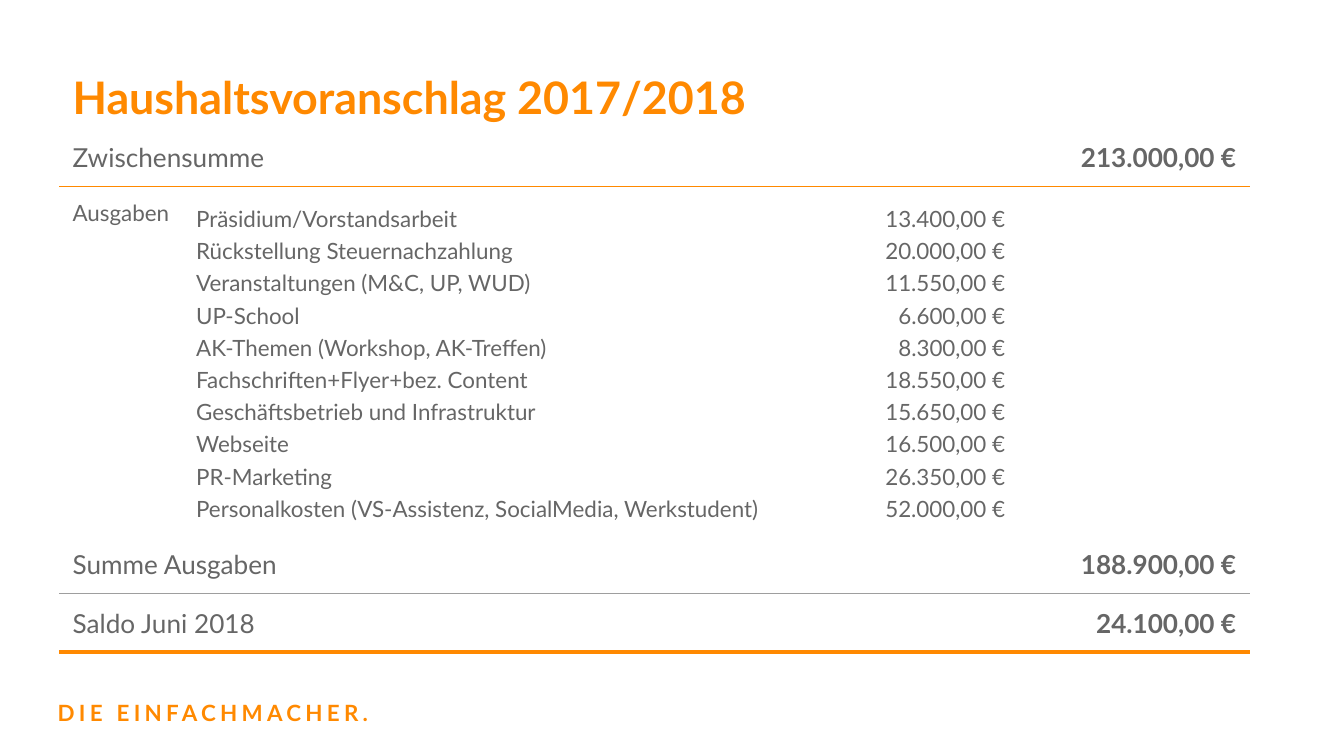
from lxml.etree import SubElement
from pptx import Presentation
from pptx.dml.color import RGBColor
from pptx.enum.text import MSO_ANCHOR, PP_ALIGN
from pptx.oxml.ns import qn
from pptx.util import Pt

FONT = "Lato"
ORANGE, TEXT_GRAY, RULE_GRAY = "FF8900", "666666", "9E9E9E"
INSET = 7.2

EXPENSES = [
    ("Präsidium/Vorstandsarbeit", "13.400,00 €"),
    ("Rückstellung Steuernachzahlung", "20.000,00 €"),
    ("Veranstaltungen (M&C, UP, WUD)", "11.550,00 €"),
    ("UP-School", "6.600,00 €"),
    ("AK-Themen (Workshop, AK-Treffen)", "8.300,00 €"),
    ("Fachschriften+Flyer+bez. Content", "18.550,00 €"),
    ("Geschäftsbetrieb und Infrastruktur", "15.650,00 €"),
    ("Webseite", "16.500,00 €"),
    ("PR-Marketing", "26.350,00 €"),
    ("Personalkosten (VS-Assistenz, SocialMedia, Werkstudent)", "52.000,00 €"),
]
# Table row: label and amount
TOTALS = {
    0: ("Zwischensumme", "213.000,00 €"),
    2: ("Summe Ausgaben", "188.900,00 €"),
    3: ("Saldo Juni 2018", "24.100,00 €"),
}
# Rule under a table row: colour and width
RULES = {0: (ORANGE, 0.75), 2: (RULE_GRAY, 0.75), 3: (ORANGE, 2.25)}


def color(value):
    return RGBColor.from_string(value)


def write(frame, lines, size, ink, bold=False, align=PP_ALIGN.LEFT, spacing=1.0):
    frame.word_wrap = True
    for index, line in enumerate(lines):
        paragraph = frame.paragraphs[0] if index == 0 else frame.add_paragraph()
        paragraph.alignment = align
        paragraph.line_spacing = spacing
        run = paragraph.add_run()
        run.text = line
        run.font.name = FONT
        run.font.size = Pt(size)
        run.font.bold = bold
        run.font.color.rgb = color(ink)


def set_insets(target):
    target.margin_left = target.margin_right = Pt(INSET)
    target.margin_top = target.margin_bottom = Pt(INSET)


def add_title(slide, left, top, width, height):
    title = slide.shapes.title
    title.left, title.top = Pt(left), Pt(top)
    title.width, title.height = Pt(width), Pt(height)
    set_insets(title.text_frame)
    title.text_frame.vertical_anchor = MSO_ANCHOR.TOP
    write(title.text_frame, ["Haushaltsvoranschlag 2017/2018"], 24, ORANGE,
          bold=True, spacing=1.15)


def add_claim(slide, left, top, width, height):
    claim = slide.shapes.add_textbox(Pt(left), Pt(top), Pt(width), Pt(height))
    set_insets(claim.text_frame)
    write(claim.text_frame, ["DIE EINFACHMACHER."], 12, ORANGE, bold=True)
    # Letter spacing in hundredths of a point
    run = claim.text_frame.paragraphs[0].runs[0]
    run.font._element.set("spc", "230")


def set_borders(cell, above, below):
    properties = cell._tc.get_or_add_tcPr()
    sides = {"a:lnL": None, "a:lnR": None, "a:lnT": above, "a:lnB": below}
    for side, rule in sides.items():
        line = SubElement(properties, qn(side))
        if rule is None:
            SubElement(line, qn("a:noFill"))
        else:
            ink, width = rule
            line.set("w", str(Pt(width)))
            fill = SubElement(line, qn("a:solidFill"))
            SubElement(fill, qn("a:srgbClr")).set("val", ink)


def add_budget(slide, left, top, column_widths, row_heights):
    budget = slide.shapes.add_table(
        len(row_heights), len(column_widths), Pt(left), Pt(top),
        Pt(sum(column_widths)), Pt(sum(row_heights))).table
    budget.first_row = budget.horz_banding = False
    for column, width in zip(budget.columns, column_widths):
        column.width = Pt(width)
    for index, height in enumerate(row_heights):
        budget.rows[index].height = Pt(height)
        for cell in budget.rows[index].cells:
            set_insets(cell)
            set_borders(cell, RULES.get(index - 1), RULES.get(index))
            cell.fill.background()

    # Totals
    for index, (label, amount) in TOTALS.items():
        label_cell = budget.cell(index, 0)
        label_cell.merge(budget.cell(index, 2))
        write(label_cell.text_frame, [label], 14, TEXT_GRAY)
        write(budget.cell(index, 3).text_frame, [amount], 14, TEXT_GRAY,
              bold=True, align=PP_ALIGN.RIGHT)

    # Expenses
    write(budget.cell(1, 0).text_frame, ["Ausgaben"], 12, TEXT_GRAY)
    items, amounts = zip(*EXPENSES)
    for column, lines, align in ((1, items, PP_ALIGN.LEFT),
                                 (2, amounts, PP_ALIGN.RIGHT)):
        cell = budget.cell(1, column)
        cell.vertical_anchor = MSO_ANCHOR.MIDDLE
        write(cell.text_frame, lines, 12, TEXT_GRAY, align=align, spacing=1.2)


def main():
    presentation = Presentation()
    presentation.slide_width, presentation.slide_height = Pt(720), Pt(405)
    slide = presentation.slides.add_slide(presentation.slide_layouts[5])
    add_title(slide, 31.7, 25.9, 662.4, 46.1)
    add_budget(slide, 31.7, 68.6, [66.2, 337.7, 110.2, 123.8],
               [31.2, 187, 31.2, 31.2])
    add_claim(slide, 23.8, 367.2, 223.2, 29.5)
    presentation.save("out.pptx")


if __name__ == "__main__":
    main()
